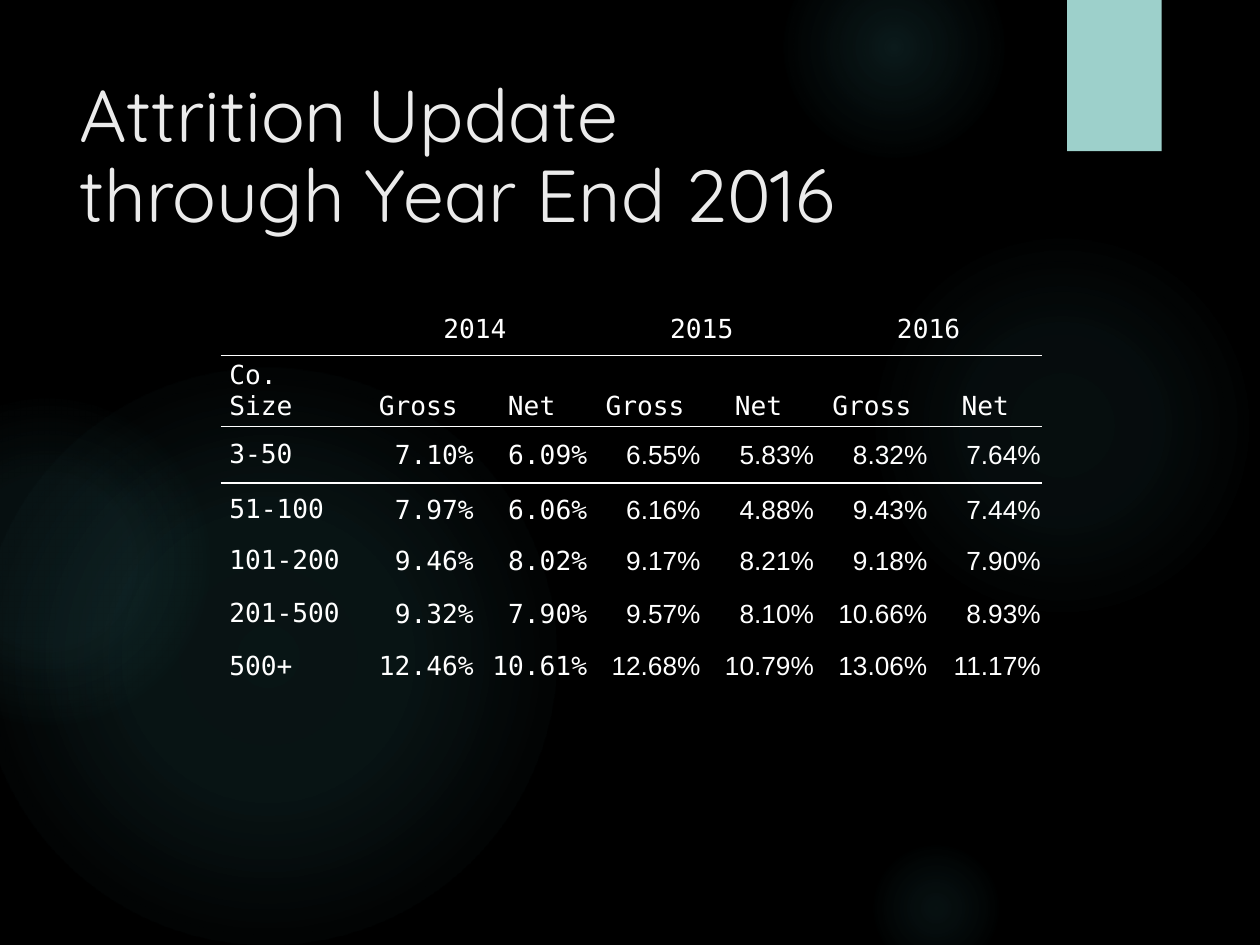
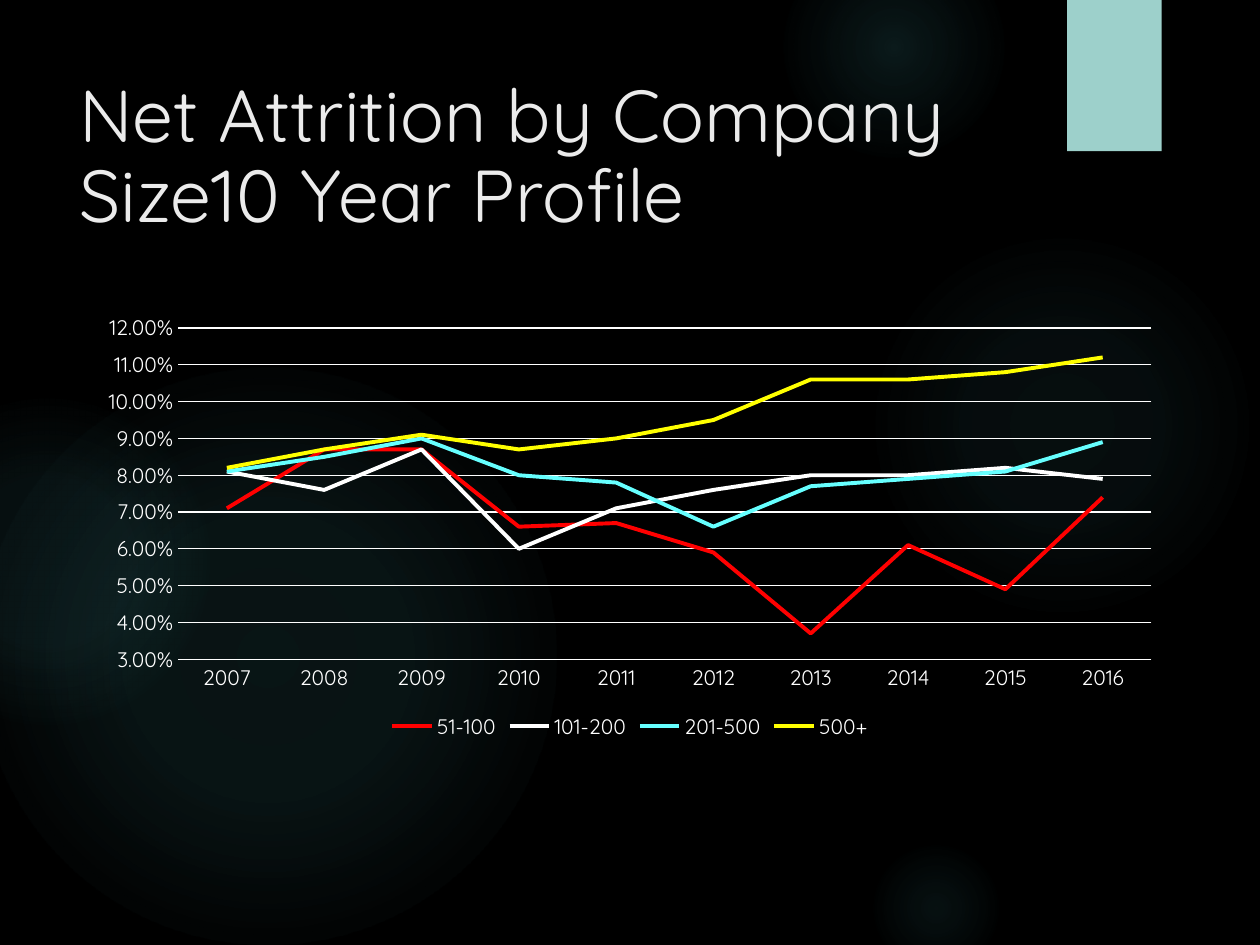
import pptx
import pptx.chart.data
import pptx.dml.color
import pptx.enum.chart
import pptx.enum.shapes
import pptx.enum.text
import pptx.oxml
import pptx.oxml.ns
import pptx.util

TABLE_TITLE = "Attrition Update\vthrough Year End 2016"
YEARS = ["2014", "2015", "2016"]
MEASURES = ["Gross", "Net"]
SIZE_HEADING = "Co. Size"
ATTRITION = [
    ("3-50", "7.10%", "6.09%", "6.55%", "5.83%", "8.32%", "7.64%"),
    ("51-100", "7.97%", "6.06%", "6.16%", "4.88%", "9.43%", "7.44%"),
    ("101-200", "9.46%", "8.02%", "9.17%", "8.21%", "9.18%", "7.90%"),
    ("201-500", "9.32%", "7.90%", "9.57%", "8.10%", "10.66%", "8.93%"),
    ("500+", "12.46%", "10.61%", "12.68%", "10.79%", "13.06%", "11.17%"),
]

CHART_TITLE = "Net Attrition by Company Size10 Year Profile"
CHART_YEARS = [str(year) for year in range(2007, 2017)]
NET_ATTRITION = [  # company size, colour, values
    ("51-100", "FF0000",
     (0.071, 0.087, 0.087, 0.066, 0.067, 0.059, 0.037, 0.061, 0.049, 0.074)),
    ("101-200", "FFFFFF",
     (0.081, 0.076, 0.087, 0.06, 0.071, 0.076, 0.08, 0.08, 0.082, 0.079)),
    ("201-500", "66FFFF",
     (0.081, 0.085, 0.09, 0.08, 0.078, 0.066, 0.077, 0.079, 0.081, 0.089)),
    ("500+", "FFFF00",
     (0.082, 0.087, 0.091, 0.087, 0.09, 0.095, 0.106, 0.106, 0.108, 0.112)),
]

THEME = {
    "background": "000000", "halo": "50B9C1", "tab": "9DD0CB",
    "title": "EBEBEB", "ink": "FFFFFF", "shadow": "000000",
    "display": "Quicksand", "mono": "DejaVu Sans Mono", "sans": "Arial",
    "title_size": 42, "table_size": 15, "axis_size": 12, "chart_size": 10,
    "rule": 1, "grid_line": 0.75, "series_line": 2.25,
}

# The slide is a grid of 120 by 90 square cells; all places are in cells.
SLIDE_WIDTH, SLIDE_HEIGHT = pptx.util.Inches(10), pptx.util.Inches(7.5)
CELL = SLIDE_WIDTH / 120
TITLE_PLACE = (6.36, 6, 92.64, 18.36)
TAB_PLACE = (101.64, 0, 9, 14.4)
CHART_PLACE = (8.28, 29.16, 103.44, 41.76)
TABLE_CORNER = (21, 28.92)
TABLE_COLUMNS = [13.44] + [10.8] * len(YEARS) * len(MEASURES)
TABLE_ROWS = [4.92, 5.52, 5.4, 5.04, 4.68, 5.4, 4.68]
HALOS = [  # left, top, diameter, (position %, opacity %) of each stop
    (82.67, 22, 37, ((0, 7), (36, 6), (69, 0))),
    (74.67, -6, 21, ((0, 14), (36, 7), (73, 0))),
    (82.67, 80, 13, ((0, 9), (36, 5), (66, 0))),
    (-2, 35, 55, ((0, 11), (36, 10), (75, 0))),
    (-11, 38, 31, ((0, 8), (36, 8), (72, 0))),
]

ALIGN = pptx.enum.text.PP_ALIGN
ANCHOR = pptx.enum.text.MSO_ANCHOR
SHAPE = pptx.enum.shapes.MSO_SHAPE
NAMESPACE = pptx.oxml.ns.nsdecls("a")
NO_STYLE_NO_GRID = "{2D5ABB26-0587-4C30-8999-92F81FD0307C}"
LABEL_MARGINS = (0.07, 0.04, 0.07, 0.04)
VALUE_MARGINS = (0.01, 0.01, 0.01, 0)


def rgb(name):
    return pptx.dml.color.RGBColor.from_string(THEME.get(name, name))


def cells(count):
    return pptx.util.Emu(round(count * CELL))


def place(*lengths):
    return [cells(length) for length in lengths]


def apply(target, **values):
    for name, value in values.items():
        setattr(target, name, value)


def format_font(font, family, size, color):
    apply(font, name=THEME[family], size=pptx.util.Pt(THEME[size]))
    font.color.rgb = rgb(color)


def format_line(line, color, width):
    line.color.rgb = rgb(color)
    line.width = pptx.util.Pt(THEME[width])


def plain_shape(slide, kind, *lengths):
    shape = slide.shapes.add_shape(kind, *place(*lengths))
    shape.shadow.inherit = False
    shape.line.fill.background()
    return shape


def add_halo(slide, left, top, diameter, stops):
    halo = plain_shape(slide, SHAPE.OVAL, left, top, diameter, diameter)
    halo.fill.background()
    stop_xml = "".join(
        f'<a:gs pos="{position * 1000}"><a:srgbClr val="{THEME["halo"]}">'
        f'<a:alpha val="{opacity * 1000}"/></a:srgbClr></a:gs>'
        for position, opacity in stops)
    gradient = pptx.oxml.parse_xml(
        f'<a:gradFill {NAMESPACE} rotWithShape="1"><a:gsLst>{stop_xml}</a:gsLst>'
        '<a:path path="circle"><a:fillToRect l="50000" t="50000" r="50000" '
        'b="50000"/></a:path></a:gradFill>')
    properties = halo.element.spPr
    properties.replace(properties.find(pptx.oxml.ns.qn("a:noFill")), gradient)
    return halo


def add_tab(slide):
    tab = plain_shape(slide, SHAPE.RECTANGLE, *TAB_PLACE)
    tab.fill.solid()
    tab.fill.fore_color.rgb = rgb("tab")
    blur, distance = pptx.util.Pt(3), pptx.util.Pt(2)
    effects = tab.element.spPr.find(pptx.oxml.ns.qn("a:effectLst"))
    effects.append(pptx.oxml.parse_xml(
        f'<a:outerShdw {NAMESPACE} blurRad="{blur}" dist="{distance}" '
        f'dir="5400000" rotWithShape="0"><a:srgbClr val="{THEME["shadow"]}">'
        '<a:alpha val="45000"/></a:srgbClr></a:outerShdw>'))
    return tab


def dress_master(deck, slide):
    """Draw the shared backdrop on a slide, then move it to the master."""
    master = deck.slide_master
    master.background.fill.solid()
    master.background.fill.fore_color.rgb = rgb("background")
    title_style = master.element.find(".//" + pptx.oxml.ns.qn("p:titleStyle"))
    for defaults in title_style.iter(pptx.oxml.ns.qn("a:defRPr")):
        defaults.set("sz", str(THEME["title_size"] * 100))
    backdrop = [add_halo(slide, *halo) for halo in HALOS] + [add_tab(slide)]
    for index, shape in enumerate(backdrop):
        shape.element.nvSpPr.cNvPr.set("id", str(100 + index))
        master.shapes.element.insert(2 + index, shape.element)


def add_title(slide, text):
    title = slide.shapes.title
    left, top, width, height = place(*TITLE_PLACE)
    apply(title, left=left, top=top, width=width, height=height)
    frame = title.text_frame
    frame.text = text
    apply(frame, word_wrap=True, vertical_anchor=ANCHOR.TOP,
          auto_size=pptx.enum.text.MSO_AUTO_SIZE.TEXT_TO_FIT_SHAPE)
    para = frame.paragraphs[0]
    para.alignment = ALIGN.LEFT
    for span in para.runs:
        format_font(span.font, "display", "title_size", "title")


def fill_cell(cell, text, align=ALIGN.LEFT, anchor=ANCHOR.MIDDLE,
              margins=LABEL_MARGINS, family="mono"):
    sides = ("margin_left", "margin_top", "margin_right", "margin_bottom")
    apply(cell, text=text, vertical_anchor=anchor,
          **dict(zip(sides, map(pptx.util.Inches, margins))))
    para = cell.text_frame.paragraphs[0]
    para.alignment = align
    for span in para.runs:
        format_font(span.font, family, "table_size", "ink")


def rule_cell(cell, sides):
    """Draw white rules on the given sides, listed in the order T, B."""
    width = pptx.util.Pt(THEME["rule"])
    properties = cell._tc.get_or_add_tcPr()
    for index, side in enumerate(sides):
        properties.insert(index, pptx.oxml.parse_xml(
            f'<a:ln{side} {NAMESPACE} w="{width}"><a:solidFill>'
            f'<a:srgbClr val="{THEME["ink"]}"/></a:solidFill></a:ln{side}>'))


def add_attrition_table(slide):
    frame = slide.shapes.add_table(
        len(TABLE_ROWS), len(TABLE_COLUMNS),
        *place(*TABLE_CORNER, sum(TABLE_COLUMNS), sum(TABLE_ROWS)))
    table = frame.table
    apply(table, first_row=False, horz_banding=False)
    for style in frame.element.iter(pptx.oxml.ns.qn("a:tableStyleId")):
        style.text = NO_STYLE_NO_GRID
    for column, width in zip(table.columns, TABLE_COLUMNS):
        column.width = cells(width)
    for row, height in zip(table.rows, TABLE_ROWS):
        row.height = cells(height)

    for index, year in enumerate(YEARS):
        first = 1 + index * len(MEASURES)
        heading = table.cell(0, first)
        heading.merge(table.cell(0, first + len(MEASURES) - 1))
        fill_cell(heading, year, ALIGN.CENTER)
    fill_cell(table.cell(1, 0), SIZE_HEADING, anchor=ANCHOR.BOTTOM)
    for column, measure in enumerate(MEASURES * len(YEARS), 1):
        fill_cell(table.cell(1, column), measure, ALIGN.CENTER, ANCHOR.BOTTOM)
    for row, (size, *rates) in enumerate(ATTRITION, 2):
        fill_cell(table.cell(row, 0), size)
        for column, rate in enumerate(rates, 1):
            family = "mono" if column <= len(MEASURES) else "sans"
            fill_cell(table.cell(row, column), rate, ALIGN.RIGHT,
                      margins=VALUE_MARGINS, family=family)

    ruled_sides = {0: "B", 1: "TB", 2: "T"}
    for row in range(len(TABLE_ROWS)):
        for column in range(len(TABLE_COLUMNS)):
            cell = table.cell(row, column)
            cell.fill.background()
            rule_cell(cell, ruled_sides.get(row, ""))


def add_attrition_chart(slide):
    data = pptx.chart.data.CategoryChartData(number_format="0.00%")
    data.categories = CHART_YEARS
    for size, _, rates in NET_ATTRITION:
        data.add_series(size, rates)
    chart = slide.shapes.add_chart(
        pptx.enum.chart.XL_CHART_TYPE.LINE, *place(*CHART_PLACE), data).chart
    apply(chart, has_title=False, has_legend=True)
    apply(chart.legend, include_in_layout=False,
          position=pptx.enum.chart.XL_LEGEND_POSITION.BOTTOM)
    format_font(chart.font, "display", "chart_size", "ink")
    format_font(chart.legend.font, "display", "axis_size", "ink")

    years, rates = chart.category_axis, chart.value_axis
    no_tick = pptx.enum.chart.XL_TICK_MARK.NONE
    for axis in (years, rates):
        apply(axis, major_tick_mark=no_tick, minor_tick_mark=no_tick)
        format_font(axis.tick_labels.font, "display", "axis_size", "ink")
    format_line(years.format.line, "ink", "grid_line")
    apply(rates, minimum_scale=0.03, maximum_scale=0.12, major_unit=0.01,
          has_major_gridlines=True)
    apply(rates.tick_labels, number_format="0.00%", number_format_is_linked=False)
    rates.format.line.fill.background()
    format_line(rates.major_gridlines.format.line, "ink", "grid_line")

    plot = chart.plots[0]
    plot.vary_by_categories = False
    for series, (_, color, _) in zip(plot.series, NET_ATTRITION):
        series.smooth = False
        format_line(series.format.line, color, "series_line")


def main():
    deck = pptx.Presentation()
    apply(deck, slide_width=SLIDE_WIDTH, slide_height=SLIDE_HEIGHT)
    title_only = deck.slide_layouts.get_by_name("Title Only")
    pages = [(TABLE_TITLE, add_attrition_table), (CHART_TITLE, add_attrition_chart)]
    for index, (title, add_content) in enumerate(pages):
        page = deck.slides.add_slide(title_only)
        if index == 0:
            dress_master(deck, page)
        add_title(page, title)
        add_content(page)
    deck.save("out.pptx")


if __name__ == "__main__":
    main()
